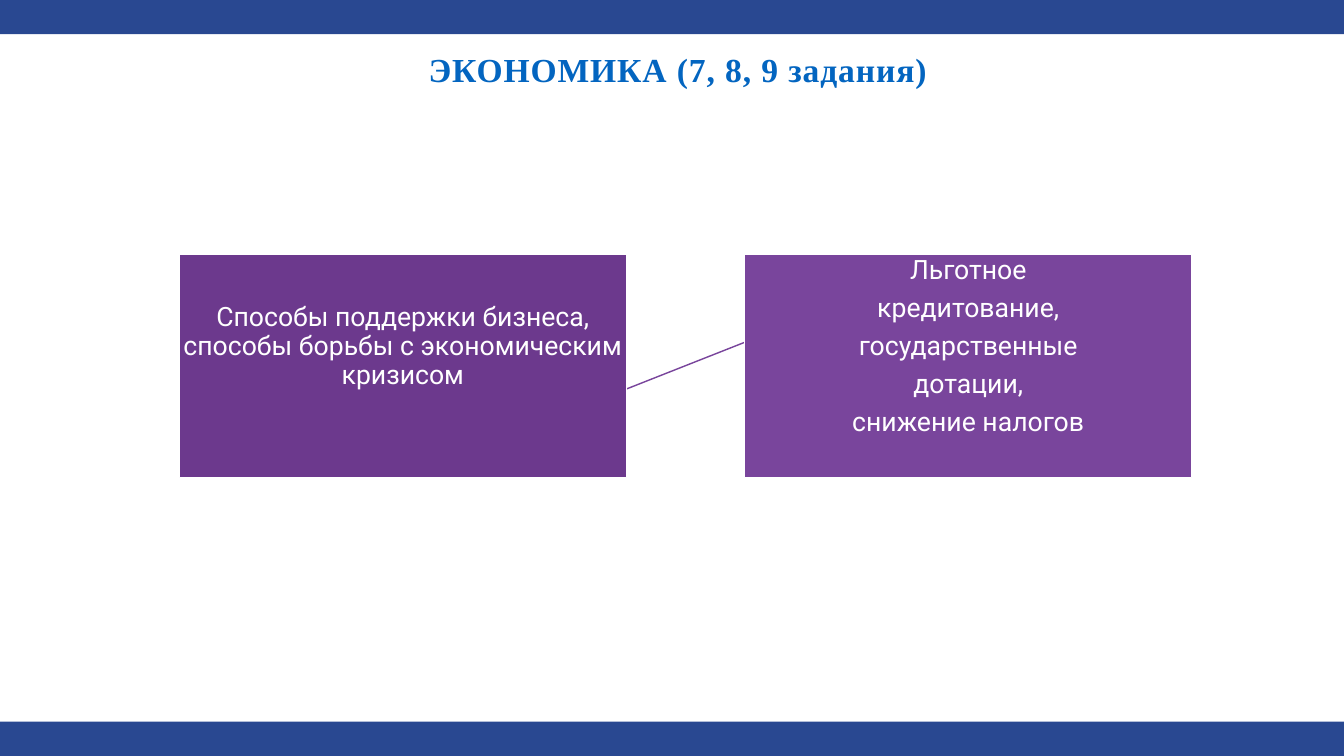
from lxml.etree import fromstring
from pptx import Presentation
from pptx.dml.color import RGBColor
from pptx.enum.shapes import MSO_CONNECTOR, MSO_SHAPE
from pptx.enum.text import MSO_ANCHOR, PP_ALIGN
from pptx.oxml import parse_xml
from pptx.oxml.ns import nsdecls
from pptx.util import Inches, Pt

TITLE = "ЭКОНОМИКА (7, 8, 9 задания)"
CARDS = [
    ("topic", ["Способы поддержки бизнеса, способы борьбы с экономическим кризисом"]),
    ("measures", ["Льготное", "кредитование,", "государственные", "дотации,", "снижение налогов"]),
]
COLORS = {
    "band": "294891", "topic": "6C398D", "measures": "79459C", "link": "79459C",
    "title": "0365C0", "title_outline": "F4F5FA", "white": "FFFFFF",
}
WIDTH, HEIGHT = 26.67, 15
BAND_HEIGHT = 0.68
CARD_LEFT, CARD_TOP, CARD_PITCH = 3.56, 5.04, 11.22
CARD_WIDTH, CARD_HEIGHT = 8.87, 4.43
CARD_INSETS = (0.03, 0.03, 0.03, 0.77)
CARD_SIZE = 38


def color(name):
    """Return the named colour of the palette."""
    return RGBColor.from_string(COLORS[name])


def add_block(slide, fill, left, top, width, height):
    """Add a filled rectangle without line or shadow."""
    block = slide.shapes.add_shape(
        MSO_SHAPE.RECTANGLE, *map(Inches, (left, top, width, height)))
    block.shadow.inherit = False
    block.fill.solid()
    block.fill.fore_color.rgb = color(fill)
    block.line.fill.background()
    return block


def set_text(frame, lines, insets, font_name, size, font_color, bold=False):
    """Fill a text frame with centred paragraphs in one font."""
    frame.word_wrap = True
    frame.margin_left, frame.margin_top, frame.margin_right, frame.margin_bottom = map(Inches, insets)
    frame.text = "\n".join(lines)
    for paragraph in frame.paragraphs:
        paragraph.alignment = PP_ALIGN.CENTER
        for run in paragraph.runs:
            run.font.name = font_name
            run.font.size = Pt(size)
            run.font.bold = bold
            run.font.color.rgb = color(font_color)


def add_title(slide):
    """Add the spaced, outlined and shadowed heading."""
    heading = slide.shapes.add_textbox(*map(Inches, (8.18, 0.95, 10.55, 0.85)))
    set_text(heading.text_frame, [TITLE], (0.04, 0.02, 0.04, 0.02),
             "Times New Roman", 48, "title", True)
    properties = heading.text_frame.paragraphs[0].runs[0].font._element
    properties.set("spc", "130")
    properties.insert(0, parse_xml(
        f'<a:ln {nsdecls("a")} w="11430"><a:solidFill>'
        f'<a:srgbClr val="{COLORS["title_outline"]}"/></a:solidFill></a:ln>'))
    properties.insert(2, parse_xml(
        f'<a:effectLst {nsdecls("a")}><a:outerShdw blurRad="25400" dist="25400" dir="2700000">'
        f'<a:srgbClr val="{COLORS["title"]}"><a:alpha val="40000"/></a:srgbClr>'
        '</a:outerShdw></a:effectLst>'))


def add_card(slide, column, fill, lines):
    """Add a text card in the given column."""
    card = add_block(slide, fill, CARD_LEFT + column * CARD_PITCH, CARD_TOP, CARD_WIDTH, CARD_HEIGHT)
    card.line.color.rgb = color("white")
    card.line.width = Pt(2)
    frame = card.text_frame
    frame.vertical_anchor = MSO_ANCHOR.MIDDLE
    set_text(frame, lines, CARD_INSETS, "Roboto", CARD_SIZE, "white")
    for index, paragraph in enumerate(frame.paragraphs):
        paragraph.line_spacing = 0.9
        paragraph.space_before = Pt(0.35 * CARD_SIZE if index else 0)
    return card


def main():
    """Build the slide and save it."""
    deck = Presentation()
    deck.slide_width, deck.slide_height = Inches(WIDTH), Inches(HEIGHT)
    slide = deck.slides.add_slide(deck.slide_layouts[6])

    for top in (0, HEIGHT - BAND_HEIGHT):
        add_block(slide, "band", 0, top, WIDTH, BAND_HEIGHT)

    link = slide.shapes.add_connector(MSO_CONNECTOR.STRAIGHT, 0, 0, 0, 0)
    link.line.color.rgb = color("link")
    link.line.width = Pt(2)
    link._element.spPr.append(parse_xml(f'<a:effectLst {nsdecls("a")}/>'))

    topic, measures = [add_card(slide, column, *card) for column, card in enumerate(CARDS)]
    link.begin_connect(topic, 2)
    link.end_connect(measures, 0)

    add_title(slide)
    deck.save("out.pptx")


if __name__ == "__main__":
    main()
